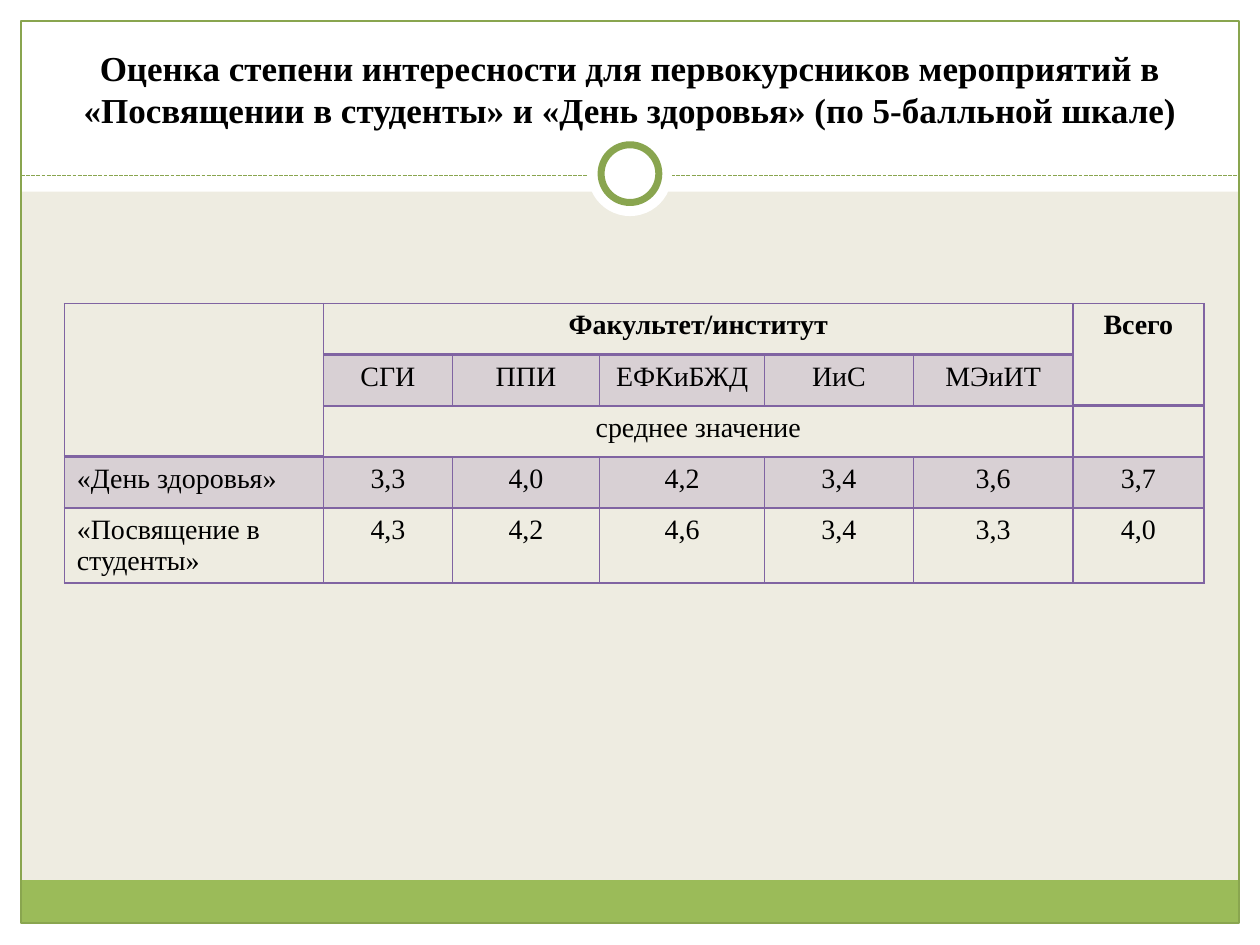
import pptx
import pptx.util
import pptx.dml.color
import pptx.enum.dml
import pptx.enum.shapes
import pptx.enum.text
import pptx.oxml
import pptx.oxml.ns

Pt = pptx.util.Pt
Shape = pptx.enum.shapes.MSO_SHAPE
Align = pptx.enum.text.PP_ALIGN
Anchor = pptx.enum.text.MSO_ANCHOR
RGB = pptx.dml.color.RGBColor.from_string
FONT = "Times New Roman"
COLORS = {"paper": "EEECE1", "white": "FFFFFF", "green": "9BBB59",
          "olive": "89A54F", "purple": "8064A2", "text": "000000"}
NAMESPACE = pptx.oxml.ns.nsdecls("a")


def add_shape(kind, left, top, width, height, fill=None, line=None, weight=0.75):
    shape = page.shapes.add_shape(kind, Pt(left), Pt(top), Pt(width), Pt(height))
    shape.shadow.inherit = False
    if fill:
        shape.fill.solid()
        shape.fill.fore_color.rgb = RGB(COLORS[fill])
    else:
        shape.fill.background()
    if line:
        shape.line.color.rgb = RGB(COLORS[line])
        shape.line.width = Pt(weight)
    else:
        shape.line.fill.background()


def format_paragraph(para, size, bold, align):
    para.alignment = align
    para.font.size = Pt(size)
    for span in para.runs:
        span.font.name = FONT
        span.font.size = Pt(size)
        span.font.bold = bold
        span.font.color.rgb = RGB(COLORS["text"])


deck = pptx.Presentation()
deck.slide_width, deck.slide_height = Pt(720), Pt(540)
page = deck.slides.add_slide(deck.slide_layouts[5])
page.background.fill.solid()
page.background.fill.fore_color.rgb = RGB(COLORS["paper"])

# White margins, green footer band and frame
for left, top, width, height in [(0, 528, 720, 12), (0, 0, 720, 109.5),
                                 (0, 0, 12, 540), (708, 0, 12, 540)]:
    add_shape(Shape.RECTANGLE, left, top, width, height, "white")
add_shape(Shape.RECTANGLE, 11.75, 503, 696, 24.5, "green")
add_shape(Shape.RECTANGLE, 12, 12, 696, 515.5, line="olive")

# Dashed rule under the title, with the ring on it
rule = page.shapes.add_connector(pptx.enum.shapes.MSO_CONNECTOR.STRAIGHT,
                                 Pt(12), Pt(100.5), Pt(708), Pt(100.5))
rule.line.color.rgb = RGB(COLORS["olive"])
rule.line.width = Pt(0.75)
rule.line.dash_style = pptx.enum.dml.MSO_LINE.SQUARE_DOT
rule.element.spPr.append(pptx.oxml.parse_xml(f"<a:effectLst {NAMESPACE}/>"))
add_shape(Shape.OVAL, 336, 75.5, 48, 48, "white")
add_shape(Shape.OVAL, 343.5, 82.75, 33, 33, "white", "olive", 4)

# Title, brought in front of the white band
title = page.shapes.title
page.shapes.element.append(title.element)
title.left, title.top, title.width, title.height = Pt(24), Pt(18), Pt(672), Pt(60)
frame = title.text_frame
frame.text = ("Оценка степени интересности для первокурсников мероприятий в "
              "«Посвящении в студенты» и «День здоровья» (по 5-балльной шкале)")
frame.word_wrap = True
frame.auto_size = pptx.enum.text.MSO_AUTO_SIZE.NONE
frame.vertical_anchor = Anchor.BOTTOM
format_paragraph(frame.paragraphs[0], 20, True, Align.CENTER)

# Table of mean scores
rows = [
    ["", "Факультет/институт", "", "", "", "", "Всего"],
    ["", "СГИ", "ППИ", "ЕФКиБЖД", "ИиС", "МЭиИТ", ""],
    ["", "среднее значение", "", "", "", "", ""],
    ["«День здоровья»", "3,3", "4,0", "4,2", "3,4", "3,6", "3,7"],
    ["«Посвящение в студенты»", "4,3", "4,2", "4,6", "3,4", "3,3", "4,0"],
]
column_widths = [148.25, 73.5, 84.25, 94.25, 85, 91.25, 74.75]
row_heights = [29.2] * 4 + [43]
merges = [((0, 0), (2, 0)), ((0, 1), (0, 5)), ((0, 6), (1, 6)), ((2, 1), (2, 5))]
shaded = {(1, column) for column in range(1, 6)} | {(3, column) for column in range(7)}
thick_below = {(0, column) for column in range(7)} | {(1, 6), (2, 0)}

table = page.shapes.add_table(len(rows), len(column_widths), Pt(36.75), Pt(173.5),
                              Pt(sum(column_widths)), Pt(sum(row_heights))).table
table.first_row = False
table.horz_banding = False
for column, width in zip(table.columns, column_widths):
    column.width = Pt(width)
for row, height in zip(table.rows, row_heights):
    row.height = Pt(height)
for start, end in merges:
    table.cell(*start).merge(table.cell(*end))

for r, texts in enumerate(rows):
    for c, text in enumerate(texts):
        cell = table.cell(r, c)
        if text:
            cell.text_frame.text = text
        align = Align.LEFT if c == 0 else Align.CENTER
        format_paragraph(cell.text_frame.paragraphs[0], 16, r == 0, align)

        # Shading at 20 % opacity
        if (r, c) in shaded:
            cell.fill.solid()
            cell.fill.fore_color.rgb = RGB(COLORS["purple"])
            tint = cell.fill._xPr.find(".//" + pptx.oxml.ns.qn("a:srgbClr"))
            tint.append(pptx.oxml.parse_xml(f'<a:alpha {NAMESPACE} val="20000"/>'))
        else:
            cell.fill.background()

        # Borders go before the fill
        properties = cell._tc.get_or_add_tcPr()
        weights = {"L": 1, "R": 1, "T": 2 if (r - 1, c) in thick_below else 1,
                   "B": 2 if (r, c) in thick_below else 1}
        for index, (side, weight) in enumerate(weights.items()):
            properties.insert(index, pptx.oxml.parse_xml(
                f'<a:ln{side} {NAMESPACE} w="{Pt(weight)}"><a:solidFill>'
                f'<a:srgbClr val="{COLORS["purple"]}"/></a:solidFill></a:ln{side}>'))

deck.save("out.pptx")
